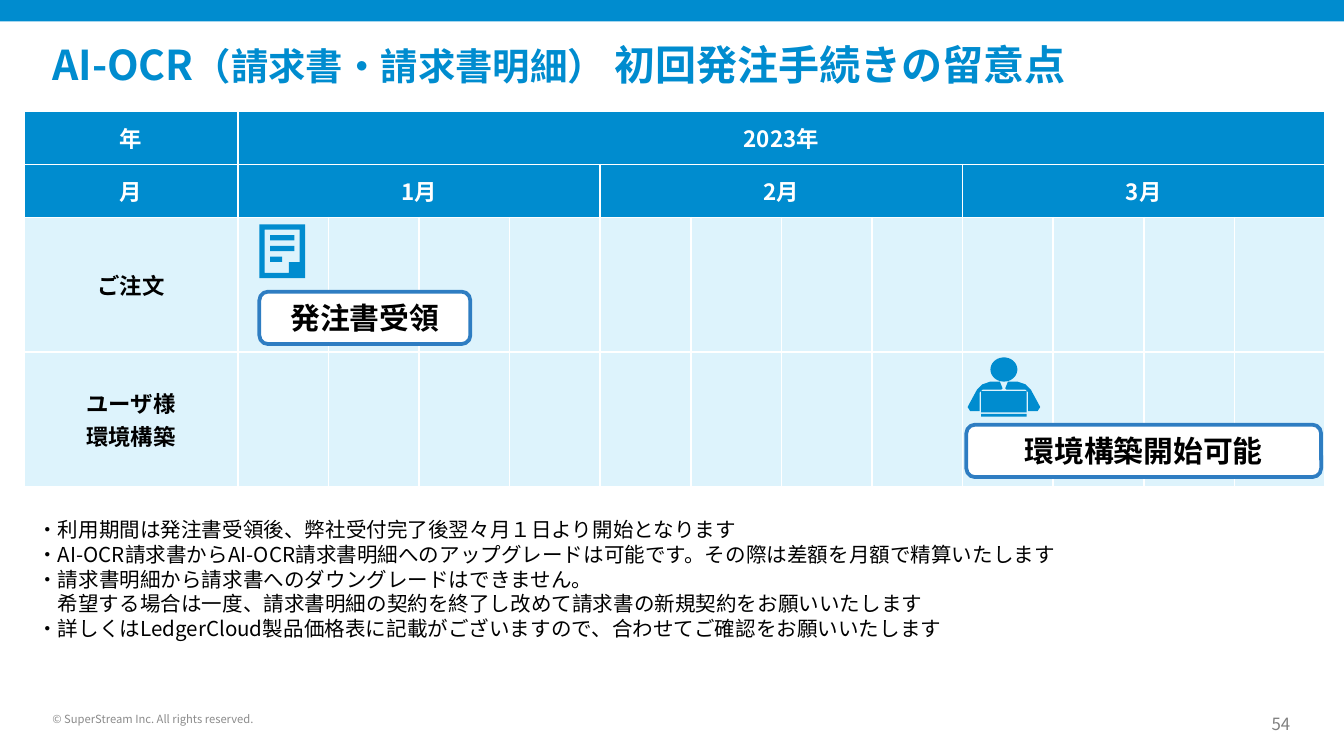
"""Build the slide on first-order timing for the AI-OCR options."""
from dataclasses import dataclass
from math import cos, pi, sin
from typing import NamedTuple, Sequence

from lxml import etree
from pptx import Presentation
from pptx.dml.color import RGBColor
from pptx.enum.shapes import MSO_SHAPE
from pptx.enum.text import MSO_ANCHOR, MSO_AUTO_SIZE, PP_ALIGN
from pptx.oxml.ns import qn
from pptx.util import Inches, Pt

RECT, ROUNDED = MSO_SHAPE.RECTANGLE, MSO_SHAPE.ROUNDED_RECTANGLE
LEFT, CENTER, RIGHT = PP_ALIGN.LEFT, PP_ALIGN.CENTER, PP_ALIGN.RIGHT
TOP, MIDDLE, BOTTOM = MSO_ANCHOR.TOP, MSO_ANCHOR.MIDDLE, MSO_ANCHOR.BOTTOM
NO_AUTOFIT = MSO_AUTO_SIZE.NONE


@dataclass(frozen=True)
class Theme:
    font: str = "Noto Sans CJK JP"
    blue: str = "008CCF"
    pale: str = "DDF3FC"
    outline: str = "2E7DC2"
    white: str = "FFFFFF"
    black: str = "000000"
    gray: str = "808080"
    light_gray: str = "8C8C8C"
    title: int = 22
    title_small: int = 20
    label: int = 16
    table: int = 12
    note: int = 11
    page: int = 9
    copyright: int = 6


class Box(NamedTuple):
    x: float
    y: float
    w: float
    h: float

    def emu(self):
        return [Inches(v) for v in self]


class Span(NamedTuple):
    text: str
    size: int


class Milestone(NamedTuple):
    text: str
    box: Box


Point = tuple[float, float]
T = Theme()
TABLE = Box(0.18, 0.83, 9.68, 2.79)
HEAD_WIDTH = 1.59
BODY_HEIGHT = 1
HEAD_HEIGHT = (TABLE.h - 2 * BODY_HEIGHT) / 2
ROW_HEIGHTS = (HEAD_HEIGHT, HEAD_HEIGHT, BODY_HEIGHT, BODY_HEIGHT)
MONTHS = ("1月", "2月", "3月")
WEEKS = 4
ROW_NAMES = (["ご注文"], ["ユーザ様", "環境構築"])
TITLE = [Span("AI-OCR", T.title), Span("（請求書・請求書明細）", T.title_small),
         Span(" 初回発注手続きの留意点", T.title)]
ORDER = Milestone("発注書受領", Box(1.93, 2.17, 1.57, 0.39))
BUILD = Milestone("環境構築開始可能", Box(7.19, 3.16, 2.64, 0.39))
NOTES = [
    "・利用期間は発注書受領後、弊社受付完了後翌々月１日より開始となります",
    "・AI-OCR請求書からAI-OCR請求書明細へのアップグレードは可能です。その際は差額を月額で精算いたします",
    "・請求書明細から請求書へのダウングレードはできません。",
    "希望する場合は一度、請求書明細の契約を終了し改めて請求書の新規契約をお願いいたします",
    "・詳しくはLedgerCloud製品価格表に記載がございますので、合わせてご確認をお願いいたします",
]


def write(tf, lines: Sequence, *, size: int = T.table, color: str = T.black,
          bold: bool = False, align=LEFT) -> None:
    """Fill a text frame, one paragraph per string or list of spans."""
    for i, line in enumerate(lines):
        p = tf.add_paragraph() if i else tf.paragraphs[0]
        p.alignment, p.line_spacing = align, 1.0
        for span in [Span(line, size)] if isinstance(line, str) else line:
            r = p.add_run()
            r.text = span.text
            r.font.name, r.font.size, r.font.bold = T.font, Pt(span.size), bold
            r.font.color.rgb = RGBColor.from_string(color)
            etree.SubElement(r.font._element, qn("a:ea"), typeface=T.font)


def set_frame(tf, anchor, margin: float | None = None) -> None:
    """Set wrapping, anchor and, when given, one margin for all sides."""
    tf.auto_size, tf.word_wrap, tf.vertical_anchor = NO_AUTOFIT, True, anchor
    if margin is not None:
        tf.margin_left = tf.margin_right = tf.margin_top = tf.margin_bottom = Inches(margin)


def add_text(shapes, box: Box, lines: Sequence, *, anchor=TOP,
             margin: float | None = None, **style):
    """Add a wrapped text box and return its frame."""
    tf = shapes.add_textbox(*box.emu()).text_frame
    set_frame(tf, anchor, margin)
    write(tf, lines, **style)
    return tf


def paint(sp, fill: str, line: str | None = None) -> None:
    """Give a shape a flat fill and an optional outline."""
    sp.shadow.inherit = False
    sp.fill.solid()
    sp.fill.fore_color.rgb = RGBColor.from_string(fill)
    if line:
        sp.line.color.rgb, sp.line.width = RGBColor.from_string(line), Pt(2)
    else:
        sp.line.fill.background()


def add_shape(shapes, kind, box: Box, fill: str, line: str | None = None):
    """Add a painted preset shape."""
    sp = shapes.add_shape(kind, *box.emu())
    paint(sp, fill, line)
    return sp


def add_outline(shapes, contours: Sequence[Sequence[Point]]) -> None:
    """Add one blue freeform made of closed contours."""
    paths = [[(Inches(x), Inches(y)) for x, y in c] for c in contours]
    fb = shapes.build_freeform(*paths[0][0])
    for i, path in enumerate(paths):
        if i:
            fb.move_to(*path[0])
        fb.add_line_segments(path[1:], close=True)
    paint(fb.convert_to_shape(), T.blue)


def corners(x1: float, y1: float, x2: float, y2: float) -> list[Point]:
    """Return the corners of a rectangle."""
    return [(x1, y1), (x2, y1), (x2, y2), (x1, y2)]


def add_person(shapes) -> None:
    """Draw a person behind a laptop."""
    mid, steps = 7.47, 40
    head = [(mid + 0.1 * cos(2 * pi * i / steps), 2.75 + 0.09 * sin(2 * pi * i / steps))
            for i in range(steps)]
    arm = [(7.44, 2.84), (7.37, 2.84), (7.31, 2.86), (7.27, 2.9), (7.21, 3.01),
           (7.2, 3.03), (7.22, 3.06), (7.26, 3.06), (7.29, 3.06), (7.29, 2.92),
           (7.31, 2.9), (7.45, 2.9), (7.46, 2.89)]
    other_arm = [(2 * mid - x, y) for x, y in arm]
    add_outline(shapes, [head, arm, other_arm, corners(7.3, 2.91, 7.64, 3.07),
                         corners(7.3, 3.08, 7.64, 3.1)])


def add_document(shapes) -> None:
    """Draw a page with a folded corner and three text lines."""
    group = shapes.add_group_shape().shapes
    inside = [(2.15, 1.95), (2.15, 2.03), (1.97, 2.03), (1.97, 1.71), (2.23, 1.71), (2.23, 1.95)]
    add_outline(group, [corners(1.93, 1.67, 2.27, 2.07), inside])
    for i, width in enumerate((0.18, 0.18, 0.09)):
        add_shape(group, RECT, Box(2.01, 1.75 + 0.08 * i, width, 0.04), T.blue)


def add_milestone(shapes, item: Milestone) -> None:
    """Draw a rounded label."""
    tf = add_shape(shapes, ROUNDED, item.box, T.white, T.outline).text_frame
    set_frame(tf, MIDDLE)
    write(tf, [item.text], size=T.label, bold=True, align=CENTER)


def style_cell(cell, fill: str) -> None:
    """Fill a cell and give it white borders."""
    tc_pr = cell._tc.get_or_add_tcPr()
    for side in ("a:lnL", "a:lnR", "a:lnT", "a:lnB"):
        ln = etree.SubElement(tc_pr, qn(side), w=str(Pt(1)))
        etree.SubElement(etree.SubElement(ln, qn("a:solidFill")), qn("a:srgbClr"), val=T.white)
    cell.fill.solid()
    cell.fill.fore_color.rgb = RGBColor.from_string(fill)
    cell.vertical_anchor = MIDDLE


def add_schedule(shapes) -> None:
    """Add the table of months and weeks."""
    weeks = len(MONTHS) * WEEKS
    table = shapes.add_table(len(ROW_HEIGHTS), weeks + 1, *TABLE.emu()).table
    table.horz_banding = False
    for i, col in enumerate(table.columns):
        col.width = Inches((TABLE.w - HEAD_WIDTH) / weeks if i else HEAD_WIDTH)
    for i, height in enumerate(ROW_HEIGHTS):
        table.rows[i].height = Inches(height)
        for cell in table.rows[i].cells:
            style_cell(cell, T.blue if i < 2 else T.pale)
    table.cell(0, 1).merge(table.cell(0, weeks))
    heads = [(0, 0, "年"), (0, 1, "2023年"), (1, 0, "月")]
    for i, month in enumerate(MONTHS):
        first = 1 + WEEKS * i
        table.cell(1, first).merge(table.cell(1, first + WEEKS - 1))
        heads.append((1, first, month))
    for row, col, text in heads:
        write(table.cell(row, col).text_frame, [text], color=T.white, bold=True, align=CENTER)
    for row, lines in enumerate(ROW_NAMES, start=2):
        write(table.cell(row, 0).text_frame, lines, bold=True, align=CENTER)


def main() -> None:
    """Build and save the slide."""
    prs = Presentation()
    prs.slide_width, prs.slide_height = Inches(10), Inches(10 * 9 / 16)
    s = prs.slides.add_slide(prs.slide_layouts[5])
    shapes, title = s.shapes, s.shapes.title
    title.left, title.top, title.width, title.height = Box(0.39, 0.29, 7.76, 0.64).emu()
    set_frame(title.text_frame, TOP, 0)
    write(title.text_frame, [TITLE], color=T.blue, bold=True)
    add_shape(shapes, RECT, Box(0, 0, 10, 0.16), T.blue)
    add_text(shapes, Box(9.21, 5.31, 0.39, 0.15), ["54"], anchor=BOTTOM, margin=0,
             size=T.page, color=T.gray, align=RIGHT)
    add_text(shapes, Box(0.39, 5.25, 2.36, 0.15), ["© SuperStream Inc. All rights reserved."],
             anchor=BOTTOM, margin=0, size=T.copyright, color=T.light_gray)
    add_schedule(shapes)
    add_person(shapes)
    add_milestone(shapes, BUILD)
    add_document(shapes)
    add_milestone(shapes, ORDER)
    tf = add_text(shapes, Box(0.18, 3.8, 9.7, 1.03), NOTES, size=T.note)
    tf.paragraphs[3]._p.get_or_add_pPr().set("marL", str(Pt(T.note)))
    prs.save("out.pptx")


if __name__ == "__main__":
    main()
